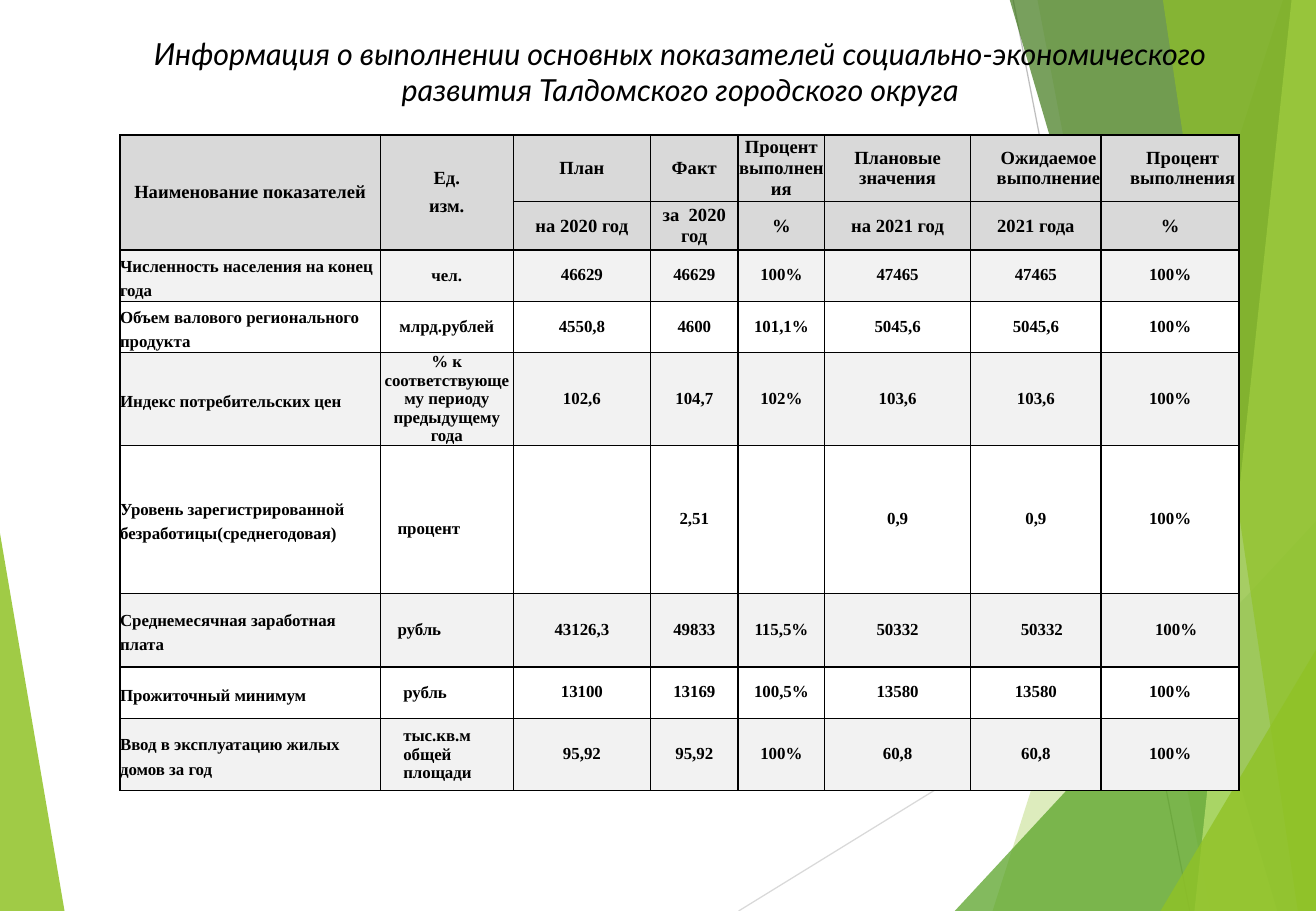
"""Build the slide with the socio-economic indicators of the Taldom district."""
from dataclasses import dataclass

from lxml import etree
from pptx import Presentation
from pptx import util as u
from pptx.dml import color
from pptx.enum import shapes, text
from pptx.oxml import ns


@dataclass(frozen=True)
class Theme:
    ink: str = "000000"
    lime: str = "90C226"
    green: str = "54A021"
    forest: str = "3F7819"
    pale: str = "C0E474"
    light_line: str = "D9D9D9"
    mid_line: str = "BFBFBF"
    header_fill: str = "D9D9D9"
    row_fills: tuple = ("F2F2F2", "FFFFFF")
    title_font: str = "Lato"
    table_font: str = "Times New Roman"
    title_size: float = 18
    header_size: float = 11
    body_size: float = 10
    thick: float = 1
    thin: float = 0.5
    hairline: float = 0.75


def apply(target, values):
    for name, value in values.items():
        setattr(target, name, value)


def write(cell, content, size, formats, indent=0):
    apply(cell, {"vertical_anchor": text.MSO_ANCHOR.MIDDLE, "margin_left": 0,
                 "margin_right": 0, "margin_top": 0, "margin_bottom": 0})
    cell.text_frame.text = content
    for para in cell.text_frame.paragraphs:
        apply(para, formats)
        if indent:
            para._p.get_or_add_pPr().set("marL", str(u.Cm(indent)))
        for span in para.runs:
            apply(span.font, {"name": theme.table_font, "size": u.Pt(size), "bold": True})
            span.font.color.rgb = color.RGBColor.from_string(theme.ink)


theme = Theme()
WIDTH, HEIGHT = 27.51, 19.05
deck = Presentation()
apply(deck, {"slide_width": u.Cm(WIDTH), "slide_height": u.Cm(HEIGHT)})
page = deck.slides.add_slide(deck.slide_layouts[6])

rays = [
    ((15.44, HEIGHT), (WIDTH, 11.61), theme.light_line),
    ((21.18, 0), (24.87, HEIGHT), theme.mid_line),
]
for start, end, tone in rays:
    ray = page.shapes.add_connector(
        shapes.MSO_CONNECTOR.STRAIGHT, *[u.Cm(value) for value in start + end])
    ray.line.width = u.Pt(theme.hairline)
    ray.line.color.rgb = color.RGBColor.from_string(tone)
    etree.SubElement(ray.element.spPr, ns.qn("a:effectLst"))

corner, top_corner = (WIDTH, HEIGHT), (WIDTH, 0)
facets = [
    ([(0, 11.15), (1.35, HEIGHT), (0, HEIGHT)], theme.lime, 85),
    ([(26.82, 0), (20.75, HEIGHT), corner, top_corner], theme.lime, 30),
    ([(21.69, 0), (25.3, HEIGHT), corner, top_corner], theme.lime, 20),
    ([(19.96, HEIGHT), (WIDTH, 10.9), corner], theme.green, 72),
    ([(21.11, 0), (26.7, HEIGHT), corner, top_corner], theme.forest, 70),
    ([(27, 0), (24.97, HEIGHT), corner, top_corner], theme.pale, 70),
    ([(24.31, 0), (27.13, HEIGHT), corner, top_corner], theme.lime, 65),
    ([(24.26, HEIGHT), (WIDTH, 13.59), corner], theme.lime, 80),
]
for outline, tone, opacity in facets:
    points = [(u.Cm(x), u.Cm(y)) for x, y in outline]
    builder = page.shapes.build_freeform(*points[0])
    builder.add_line_segments(points[1:], close=True)
    facet = builder.convert_to_shape()
    facet.shadow.inherit = False
    facet.fill.solid()
    facet.fill.fore_color.rgb = color.RGBColor.from_string(tone)
    facet.line.fill.background()
    tint = facet.element.spPr.find(".//" + ns.qn("a:srgbClr"))
    etree.SubElement(tint, ns.qn("a:alpha"), val=str(opacity * 1000))

column_widths = [5.44, 2.78, 2.87, 1.83, 1.81, 3.05, 2.73, 2.88]
row_heights = [1.4, 1.01, 1.07, 1.07, 1.94, 3.08, 1.55, 1.07, 1.52]
headers = [
    ["Наименование показателей", "Ед.\nизм.", "План", "Факт", "Процент выполнения",
     "Плановые значения", "Ожидаемое выполнение", "Процент выполнения"],
    ["", "", "на 2020 год", "за  2020 год", "%", "на 2021 год", "2021 года", "%"],
]
indicators = [
    ["Численность населения на конец года", "чел.",
     "46629", "46629", "100%", "47465", "47465", "100%"],
    ["Объем валового регионального продукта", "млрд.рублей",
     "4550,8", "4600", "101,1%", "5045,6", "5045,6", "100%"],
    ["Индекс потребительских цен", "% к соответствующему периоду предыдущему года",
     "102,6", "104,7", "102%", "103,6", "103,6", "100%"],
    ["Уровень зарегистрированной безработицы(среднегодовая)", "процент",
     "", "2,51", "", "0,9", "0,9", "100%"],
    ["Среднемесячная заработная плата", "рубль",
     "43126,3", "49833", "115,5%", "50332", "50332", "100%"],
    ["Прожиточный минимум", "рубль",
     "13100", "13169", "100,5%", "13580", "13580", "100%"],
    ["Ввод в эксплуатацию жилых домов за год", "тыс.кв.м общей площади",
     "95,92", "95,92", "100%", "60,8", "60,8", "100%"],
]
indents = {(0, 6): 0.53, (0, 7): 0.53, (5, 1): 0.36, (6, 1): 0.36,
           (6, 6): 0.25, (6, 7): 0.25, (7, 1): 0.48, (8, 1): 0.48}
thick_columns, thick_rows = {0, 1, 4, 7, 8}, {0, 2, 7}

frame = page.shapes.add_table(
    len(row_heights), len(column_widths), u.Cm(2.51), u.Cm(2.82),
    u.Cm(sum(column_widths)), u.Cm(sum(row_heights)))
table = frame.table
apply(table, {"first_row": False, "horz_banding": False})
for column, width in zip(table.columns, column_widths):
    column.width = u.Cm(width)
for row, height in zip(table.rows, row_heights):
    row.height = u.Cm(height)

centred = {"alignment": text.PP_ALIGN.CENTER}
left = {"alignment": text.PP_ALIGN.LEFT}
name_format = {**left, "line_spacing": u.Pt(14.4)}
value_format = {**centred, "line_spacing": u.Pt(10.5), "space_before": u.Pt(6)}

for r, contents in enumerate(headers + indicators):
    is_header = r < len(headers)
    fill = theme.header_fill if is_header else theme.row_fills[r % 2]
    for c, content in enumerate(contents):
        cell = table.cell(r, c)
        indent = indents.get((r, c), 0)
        if is_header:
            formats = centred
        elif c == 0:
            formats = name_format
        elif c == 1:
            formats = left if indent else centred
        else:
            formats = value_format
        if content:
            size = theme.header_size if is_header else theme.body_size
            write(cell, content, size, formats, indent)
        edges = {"lnL": c in thick_columns, "lnR": c + 1 in thick_columns,
                 "lnT": r in thick_rows, "lnB": r + 1 in thick_rows or (r == 0 and c < 2)}
        for tag, is_thick in edges.items():
            weight = u.Pt(theme.thick if is_thick else theme.thin)
            edge = etree.SubElement(
                cell._tc.get_or_add_tcPr(), ns.qn("a:" + tag), w=str(weight))
            paint = etree.SubElement(edge, ns.qn("a:solidFill"))
            etree.SubElement(paint, ns.qn("a:srgbClr"), val=theme.ink)
        cell.fill.solid()
        cell.fill.fore_color.rgb = color.RGBColor.from_string(fill)

for c in range(2):
    table.cell(0, c).merge(table.cell(1, c))
table.cell(0, 1).text_frame.paragraphs[0].space_after = u.Pt(4.2)
table.cell(5, 1).margin_top = u.Cm(0.4)

title = page.shapes.add_textbox(u.Cm(2.51), u.Cm(0.61), u.Cm(23.42), u.Cm(1.8))
title.text_frame.word_wrap = True
para = title.text_frame.paragraphs[0]
para.alignment = text.PP_ALIGN.CENTER
span = para.add_run()
span.text = ("Информация о выполнении основных показателей социально-экономического "
             "развития Талдомского городского округа")
apply(span.font, {"name": theme.title_font, "size": u.Pt(theme.title_size), "italic": True})
span.font.color.rgb = color.RGBColor.from_string(theme.ink)

deck.save("out.pptx")
